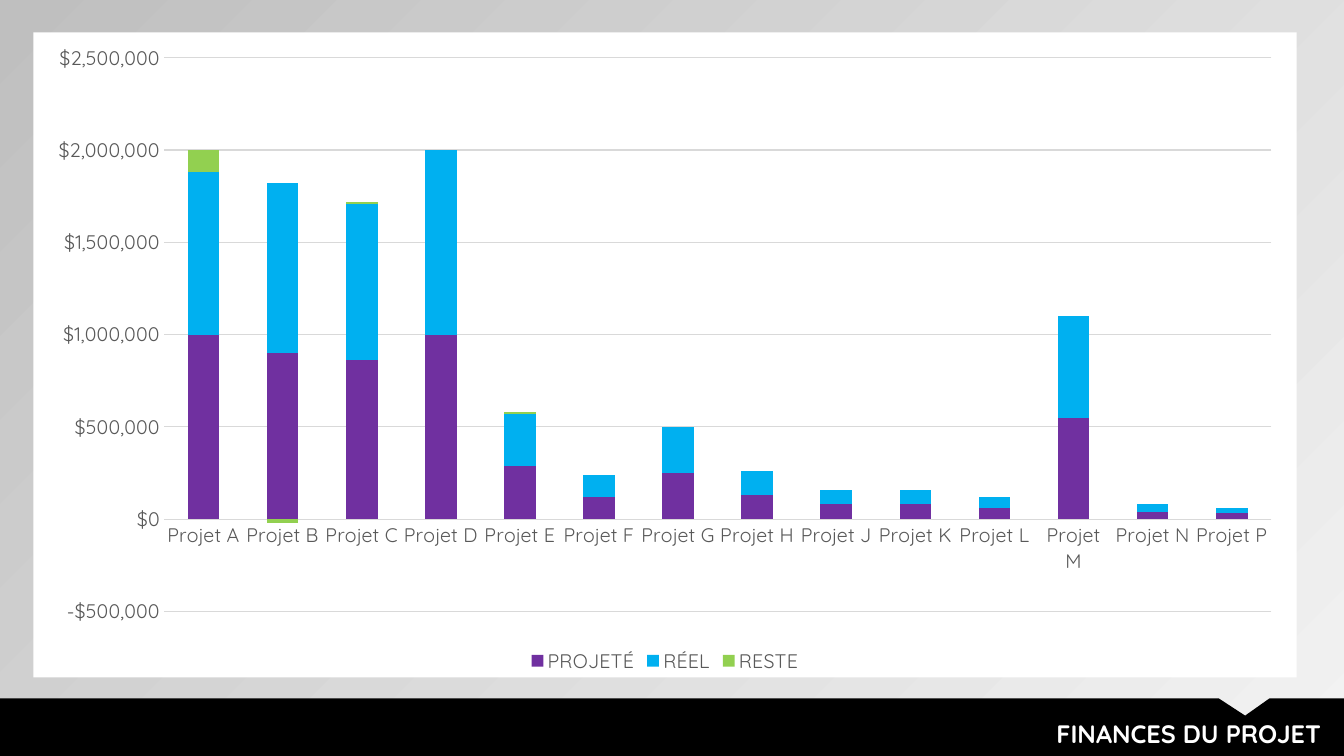
from dataclasses import dataclass

from lxml.etree import fromstring
from pptx import Presentation
from pptx.chart.chart import Chart
from pptx.chart.data import CategoryChartData
from pptx.dml.color import RGBColor
from pptx.enum.chart import XL_CHART_TYPE, XL_LEGEND_POSITION, XL_TICK_MARK
from pptx.enum.text import MSO_AUTO_SIZE, PP_ALIGN
from pptx.oxml.ns import nsdecls
from pptx.slide import Slide
from pptx.text.text import Font
from pptx.util import Inches, Pt

FONT = "Quicksand"
COLORS = {
    "light": "F2F2F2", "shade": "BFBFBF", "band": "000000", "white": "FFFFFF",
    "label": "595959", "grid": "D9D9D9",
    "planned": "7030A0", "actual": "00B0F0", "remaining": "92D050",
}


@dataclass
class BudgetSeries:
    name: str
    color: str
    thousands: list[int]


PROJECTS = [f"Projet {letter}" for letter in "ABCDEFGHJKLMNP"]
BUDGET = [
    BudgetSeries("PROJETÉ", "planned",
                 [1000, 900, 860, 1000, 290, 120, 250, 130, 80, 80, 60, 550, 40, 30]),
    BudgetSeries("RÉEL", "actual",
                 [880, 920, 850, 1000, 280, 120, 250, 130, 80, 80, 60, 550, 40, 30]),
    BudgetSeries("RESTE", "remaining", [120, -20, 10, 0, 10] + [0] * 9),
]
BAND_OUTLINE = [(0, 6.93), (12.09, 6.93), (12.35, 7.1), (12.59, 6.93),
                (13.33, 6.93), (13.33, 7.5), (0, 7.5)]


def rgb(key: str) -> RGBColor:
    return RGBColor.from_string(COLORS[key])


def style_font(font: Font, size: float, color: str, bold: bool = False) -> None:
    font.name = FONT
    font.size = Pt(size)
    font.bold = bold
    font.color.rgb = rgb(color)


def paint_background(slide: Slide) -> None:
    fill = slide.background.fill
    fill.gradient()
    fill.gradient_angle = 135
    for stop, color in zip(fill.gradient_stops, ("light", "shade")):
        stop.color.rgb = rgb(color)


def add_title_band(slide: Slide) -> None:
    """Draw the notched band along the bottom and its title."""
    start, *corners = [(Inches(x), Inches(y)) for x, y in BAND_OUTLINE]
    builder = slide.shapes.build_freeform(*start)
    builder.add_line_segments(corners, close=True)
    band = builder.convert_to_shape()
    band.shadow.inherit = False
    band.fill.solid()
    band.fill.fore_color.rgb = rgb("band")
    band.line.fill.background()

    title = slide.shapes.add_textbox(Inches(4.14), Inches(7.08), Inches(9.06), Inches(0.4))
    frame = title.text_frame
    frame.word_wrap = True
    frame.auto_size = MSO_AUTO_SIZE.SHAPE_TO_FIT_TEXT
    paragraph = frame.paragraphs[0]
    paragraph.alignment = PP_ALIGN.RIGHT
    run = paragraph.add_run()
    run.text = "FINANCES DU PROJET"
    style_font(run.font, 18, "white", bold=True)


def fill_chart_area(chart: Chart, color: str) -> None:
    area = fromstring(
        f'<c:spPr {nsdecls("c", "a")}><a:solidFill><a:srgbClr val="{COLORS[color]}"/>'
        "</a:solidFill><a:ln><a:noFill/></a:ln></c:spPr>")
    chart.element.chart.addnext(area)


def style_axes(chart: Chart) -> None:
    for axis in (chart.category_axis, chart.value_axis):
        axis.major_tick_mark = axis.minor_tick_mark = XL_TICK_MARK.NONE
        style_font(axis.tick_labels.font, 14, "label")

    amounts = chart.value_axis
    amounts.minimum_scale = -500_000
    amounts.maximum_scale = 2_500_000
    amounts.major_unit = 500_000
    amounts.tick_labels.number_format = '"$"#,##0'
    amounts.tick_labels.number_format_is_linked = False
    amounts.format.line.fill.background()
    amounts.has_major_gridlines = True
    for line in (chart.category_axis.format.line, amounts.major_gridlines.format.line):
        line.width = Pt(0.75)
        line.color.rgb = rgb("grid")


def add_budget_chart(slide: Slide) -> None:
    data = CategoryChartData(number_format='"$"#,##0')
    data.categories = PROJECTS
    for budget in BUDGET:
        data.add_series(budget.name, [amount * 1000 for amount in budget.thousands])
    chart = slide.shapes.add_chart(
        XL_CHART_TYPE.COLUMN_STACKED,
        Inches(0.33), Inches(0.32), Inches(12.53), Inches(6.4), data).chart
    style_font(chart.font, 14, "band")
    fill_chart_area(chart, "white")
    chart.has_title = False
    chart.has_legend = True
    chart.legend.position = XL_LEGEND_POSITION.BOTTOM
    chart.legend.include_in_layout = False
    style_font(chart.legend.font, 14, "label")
    style_axes(chart)

    columns = chart.plots[0]
    columns.gap_width = 150
    columns.overlap = 100
    columns.vary_by_categories = False
    for series, budget in zip(columns.series, BUDGET):
        series.invert_if_negative = False
        series.format.fill.solid()
        series.format.fill.fore_color.rgb = rgb(budget.color)


def main() -> None:
    presentation = Presentation()
    presentation.slide_width = Inches(13.33)
    presentation.slide_height = Inches(7.5)
    slide = presentation.slides.add_slide(presentation.slide_layouts[6])
    paint_background(slide)
    add_title_band(slide)
    add_budget_chart(slide)
    presentation.save("out.pptx")


if __name__ == "__main__":
    main()
